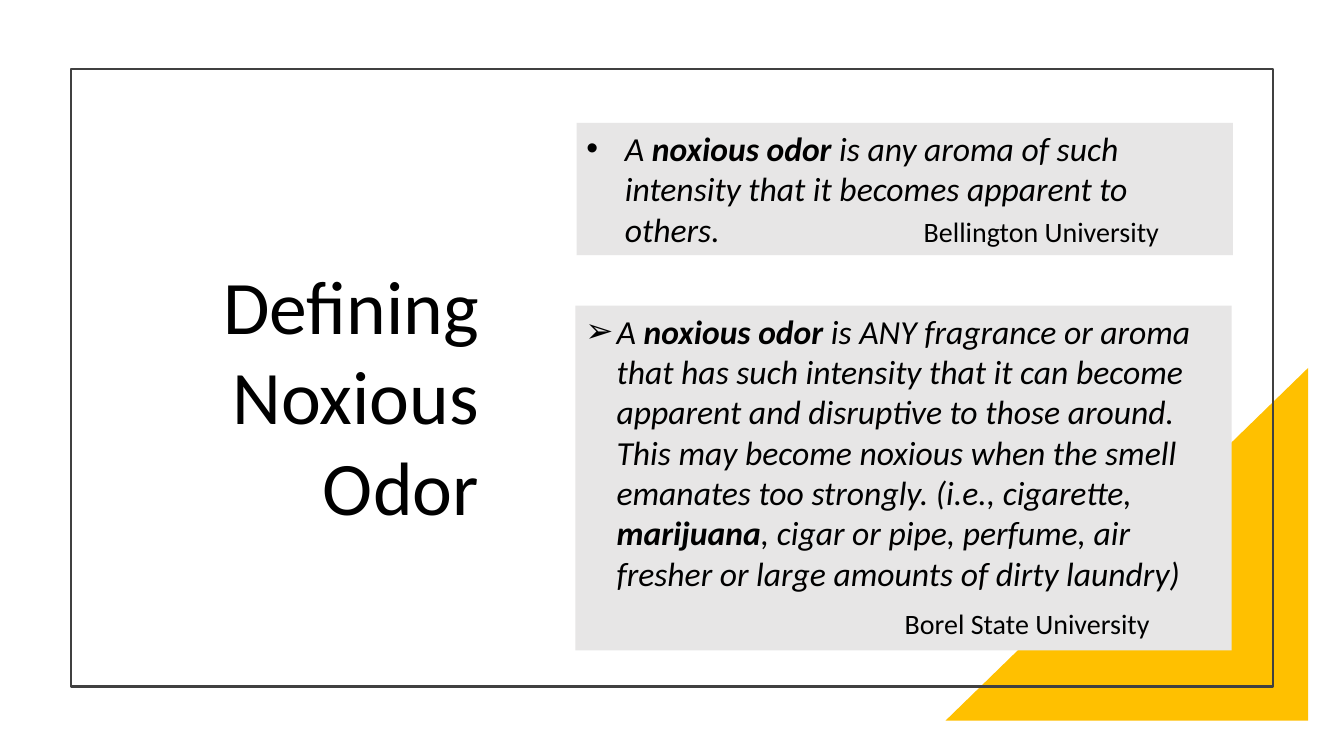
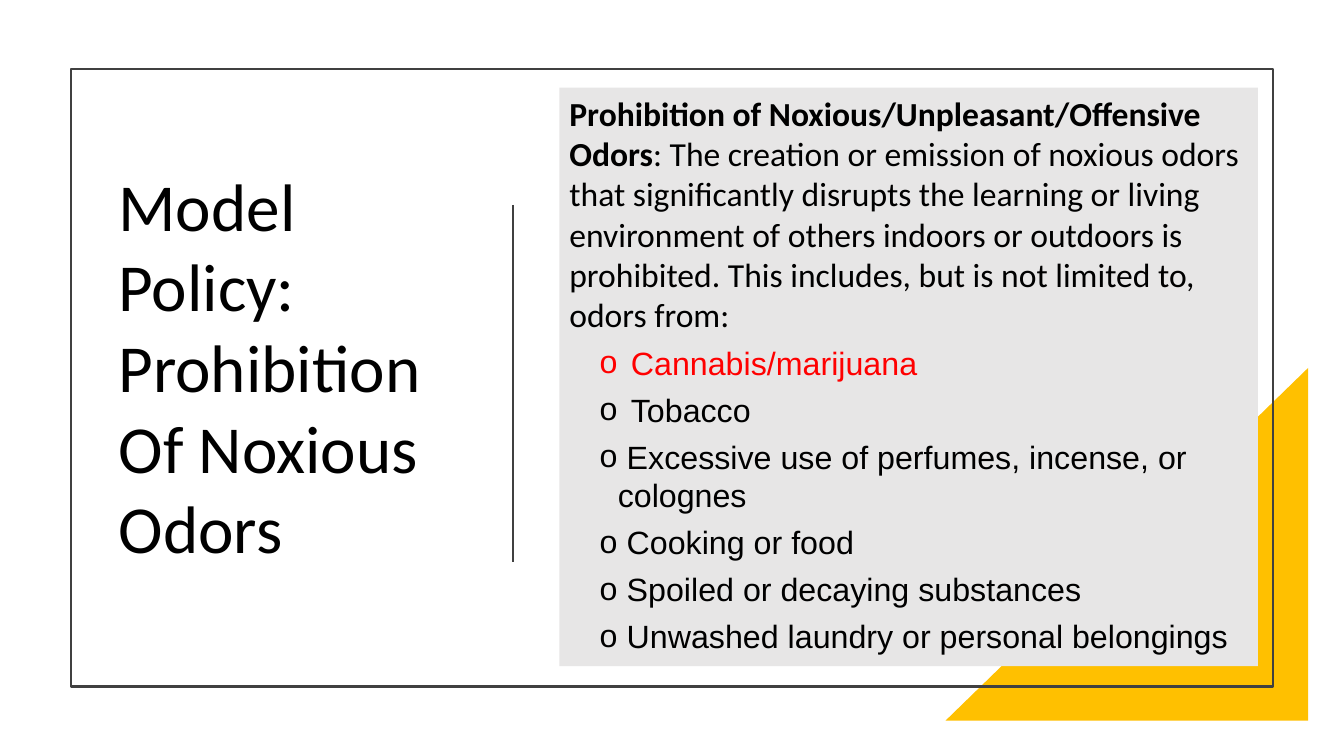
from dataclasses import dataclass
from typing import NamedTuple

from lxml.etree import SubElement
from pptx import Presentation
from pptx.dml.color import RGBColor
from pptx.enum.shapes import MSO_CONNECTOR as Connector, MSO_SHAPE as Preset
from pptx.enum.text import MSO_ANCHOR as Anchor, PP_ALIGN as Align
from pptx.oxml.ns import qn
from pptx.util import Cm, Pt


@dataclass(frozen=True)
class Theme:
    ink: str = "000000"
    accent: str = "FFC000"
    panel: str = "E7E6E6"
    outline: str = "404040"
    alert: str = "FF0000"
    font: str = "Calibri"
    list_font: str = "Arial"
    title_size: float = 54
    heading_size: float = 48
    body_size: float = 24
    list_size: float = 23
    source_size: float = 20
    outline_width: float = 1.5
    gap_after: float = 6


THEME = Theme()


class Box(NamedTuple):
    left: float
    top: float
    width: float
    height: float

    def lengths(self) -> tuple:
        return tuple(Cm(value) for value in self)


class Span(NamedTuple):
    text: str
    bold: bool = False


@dataclass(frozen=True)
class Line:
    spans: tuple
    size: float = THEME.body_size
    font: str = THEME.font
    color: str = THEME.ink
    italic: bool = False
    align: Align = Align.LEFT
    margin: float = 0
    hanging: float = 0
    bullet: str = ""
    after: float = 0


def line(text: str | tuple, **style) -> Line:
    spans = (Span(text),) if isinstance(text, str) else text
    return Line(spans, **style)


def list_item(text: str, margin: float = 1.22, hanging: float = 0.46, color: str = THEME.ink) -> Line:
    return line(text, size=THEME.list_size, font=THEME.list_font, color=color,
                margin=margin, hanging=hanging, bullet="o", after=THEME.gap_after)


def write_line(paragraph, content: Line) -> None:
    paragraph.alignment = content.align
    paragraph.space_after = Pt(content.after)
    properties = paragraph._p.get_or_add_pPr()
    properties.set("marL", str(Cm(content.margin)))
    properties.set("indent", str(-Cm(content.hanging)))
    if content.bullet:
        SubElement(properties, qn("a:buFont")).set("typeface", THEME.list_font)
        SubElement(properties, qn("a:buChar")).set("char", content.bullet)
    for span in content.spans:
        run = paragraph.add_run()
        run.text = span.text
        run.font.name = content.font
        run.font.size = Pt(content.size)
        run.font.bold = span.bold
        run.font.italic = content.italic
        run.font.color.rgb = RGBColor.from_string(content.color)


def fill_text(shape, lines: list[Line], anchor: Anchor = Anchor.TOP) -> None:
    frame = shape.text_frame
    frame.word_wrap = True
    frame.vertical_anchor = anchor
    for index, content in enumerate(lines):
        write_line(frame.add_paragraph() if index else frame.paragraphs[0], content)


def add_text(slide, box: Box, lines: list[Line], anchor: Anchor = Anchor.TOP, inset: float = 0.25) -> None:
    shape = slide.shapes.add_textbox(*box.lengths())
    frame = shape.text_frame
    frame.margin_left = frame.margin_right = Cm(inset)
    frame.margin_top = frame.margin_bottom = Cm(inset / 2)
    fill_text(shape, lines, anchor)


def add_block(slide, preset: Preset, box: Box, fill: str = "", outline: str = ""):
    shape = slide.shapes.add_shape(preset, *box.lengths())
    shape.shadow.inherit = False
    if fill:
        shape.fill.solid()
        shape.fill.fore_color.rgb = RGBColor.from_string(fill)
    else:
        shape.fill.background()
    if outline:
        shape.line.color.rgb = RGBColor.from_string(outline)
        shape.line.width = Pt(THEME.outline_width)
    else:
        shape.line.fill.background()
    return shape


def add_panel(slide, box: Box, lines: list[Line]) -> None:
    fill_text(add_block(slide, Preset.RECTANGLE, box, fill=THEME.panel), lines)


def add_divider(slide, x: float, top: float, bottom: float) -> None:
    divider = slide.shapes.add_connector(Connector.STRAIGHT, Cm(x), Cm(top), Cm(x), Cm(bottom))
    divider.line.color.rgb = RGBColor.from_string(THEME.outline)
    divider.line.width = Pt(THEME.outline_width)
    SubElement(divider._element.spPr, qn("a:effectLst"))


def add_framed_slide(presentation):
    slide = presentation.slides.add_slide(presentation.slide_layouts[6])
    corner = add_block(slide, Preset.RIGHT_TRIANGLE, Box(23.83, 9.27, 9.14, 8.89), fill=THEME.accent)
    corner._element.spPr.get_or_add_xfrm().set("flipH", "1")
    add_block(slide, Preset.RECTANGLE, Box(1.78, 1.73, 30.3, 15.57), outline=THEME.outline)
    return slide


def build_definitions(presentation) -> None:
    slide = add_framed_slide(presentation)
    title = line("Defining Noxious Odor", size=THEME.title_size, align=Align.RIGHT)
    add_text(slide, Box(2.08, 2.4, 10.24, 15.09), [title], Anchor.MIDDLE)
    term = Span("noxious odor", bold=True)
    add_panel(slide, Box(14.53, 3.1, 16.54, 3.33), [
        line((Span("A "), term,
              Span(" is any aroma of such intensity that it becomes apparent to others.")),
             italic=True, margin=0.97, hanging=0.97, bullet="•"),
    ])
    add_text(slide, Box(23.28, 5.4, 7.4, 0.9),
             [line("Bellington University", size=THEME.source_size)], inset=0)
    add_panel(slide, Box(14.5, 7.7, 16.54, 8.69), [
        line((Span("A "), term,
              Span(" is ANY fragrance or aroma that has such intensity that it can become apparent "
                   "and disruptive to those around. This may become noxious when the smell emanates "
                   "too strongly. (i.e., cigarette, "),
              Span("marijuana", bold=True),
              Span(", cigar or pipe, perfume, air fresher or large amounts of dirty laundry)")),
             italic=True, margin=0.79, hanging=0.79, bullet="➢", after=10),
        line("Borel State University", size=THEME.source_size, margin=8.05),
    ])


def build_policy(presentation) -> None:
    slide = add_framed_slide(presentation)
    add_divider(slide, 12.93, 5.16, 14.15)
    add_panel(slide, Box(14.1, 2.21, 17.6, 14.58), [
        line((Span("Prohibition of Noxious/Unpleasant/Offensive Odors", bold=True),
              Span(": The creation or emission of noxious odors that significantly disrupts the "
                   "learning or living environment of others indoors or outdoors is prohibited. "
                   "This includes, but is not limited to, odors from:")),
             after=THEME.gap_after),
        list_item("Cannabis/marijuana", 1.55, 0.79, THEME.alert),
        list_item("Tobacco", 1.55, 0.79),
        list_item(" Excessive use of perfumes, incense, or colognes"),
        list_item(" Cooking or food"),
        list_item(" Spoiled or decaying substances"),
        list_item(" Unwashed laundry or personal belongings"),
    ])
    heading = ("Model Policy:", "Prohibition", "Of Noxious", "Odors")
    add_text(slide, Box(2.74, 4.01, 8.9, 10.52),
             [line(text, size=THEME.heading_size) for text in heading])


def main() -> None:
    presentation = Presentation()
    presentation.slide_width = Cm(33.87)
    presentation.slide_height = Cm(19.05)
    build_definitions(presentation)
    build_policy(presentation)
    presentation.save("out.pptx")


if __name__ == "__main__":
    main()
